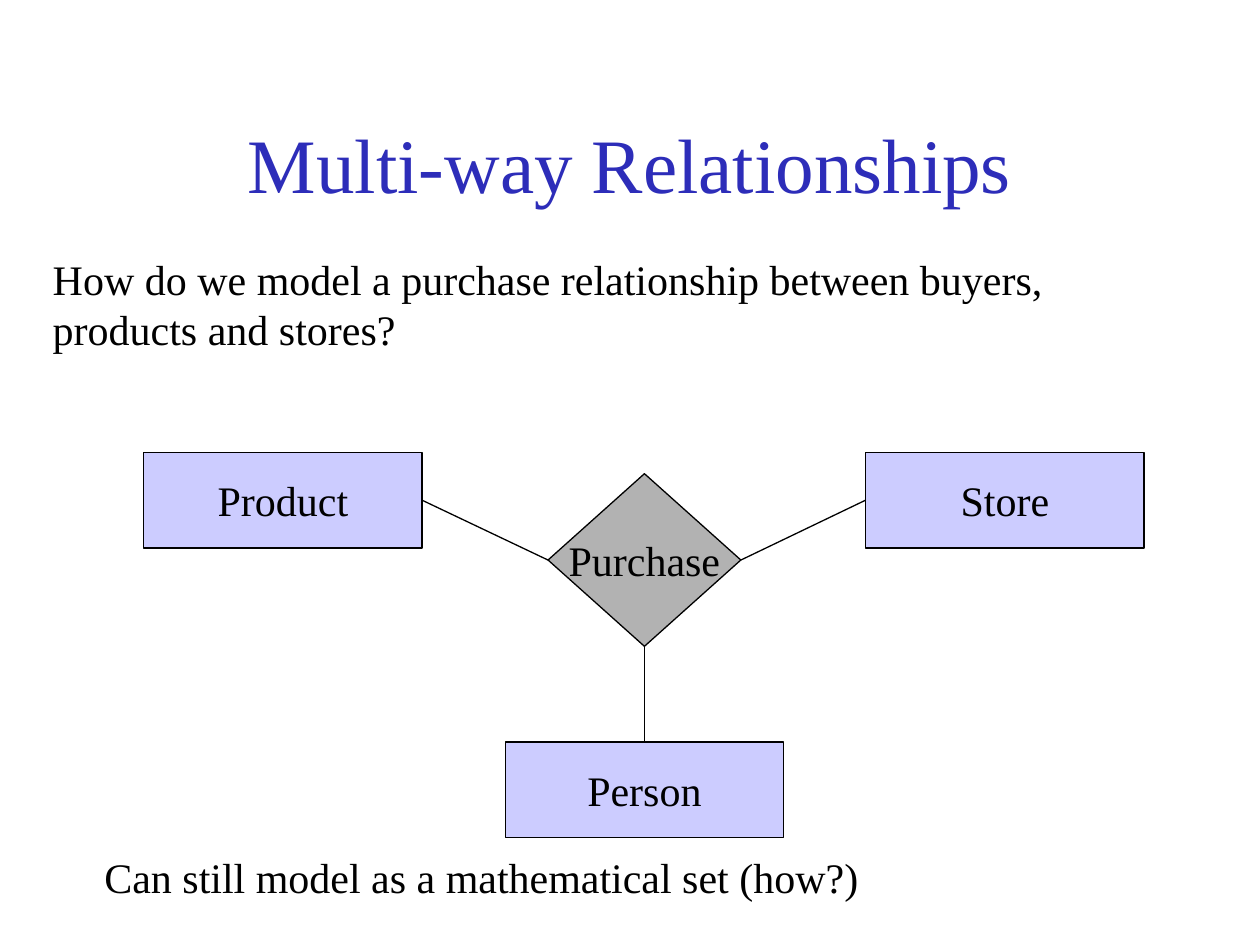
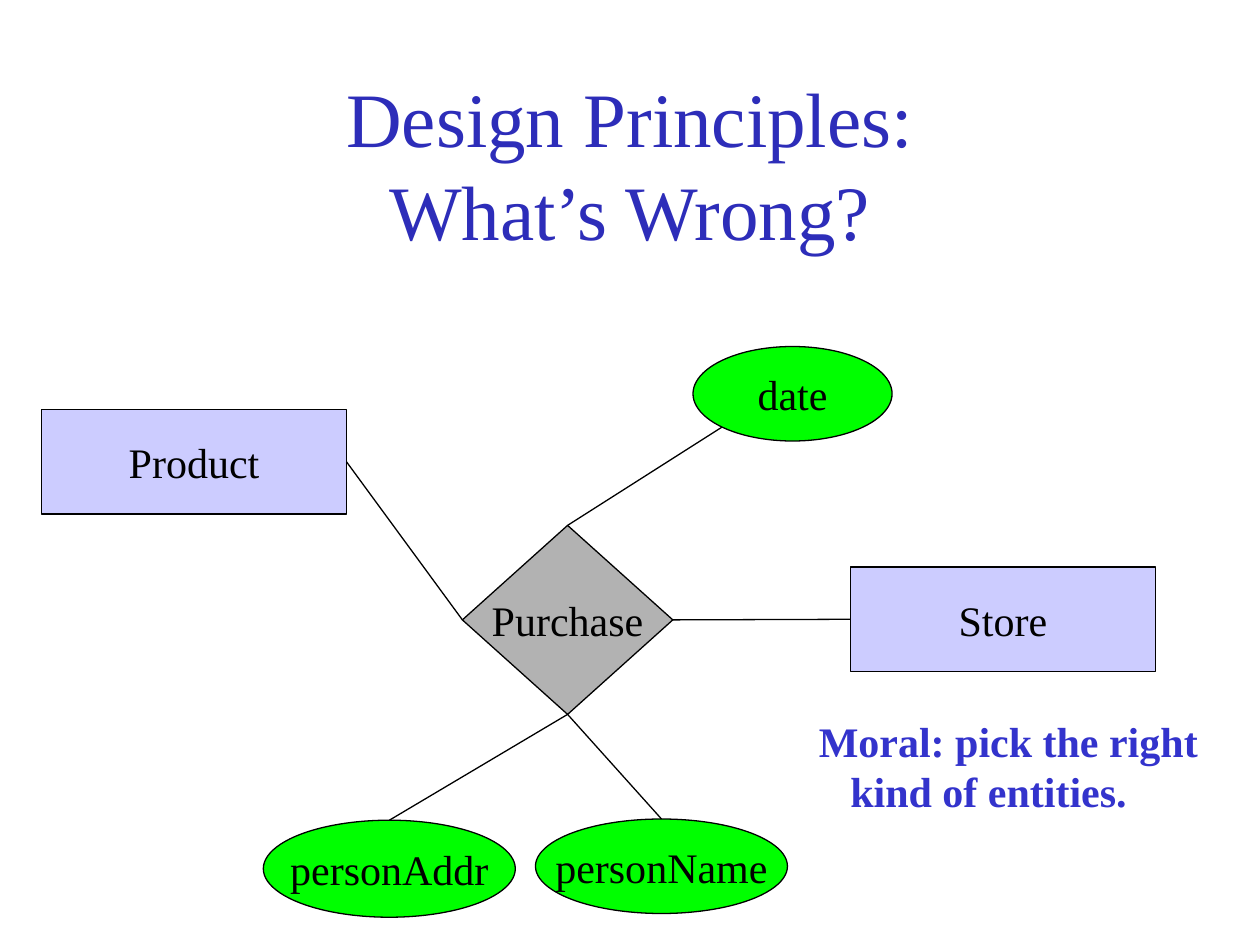
from pptx import Presentation
from pptx.dml.color import RGBColor
from pptx.enum.shapes import MSO_CONNECTOR, MSO_SHAPE
from pptx.enum.text import MSO_ANCHOR, MSO_AUTO_SIZE, PP_ALIGN
from pptx.util import Inches, Pt
from lxml.etree import SubElement
from pptx.oxml.ns import qn

FONT = "Times New Roman"
BLACK = RGBColor(0x00, 0x00, 0x00)
TITLE_BLUE = RGBColor(0x2D, 0x2D, 0xB9)
MORAL_BLUE = RGBColor(0x33, 0x33, 0xCC)
ENTITY_FILL = RGBColor(0xCC, 0xCC, 0xFF)
RELATION_FILL = RGBColor(0xB2, 0xB2, 0xB2)
ATTRIBUTE_FILL = RGBColor(0x00, 0xFF, 0x00)

ENTITY = (MSO_SHAPE.RECTANGLE, ENTITY_FILL)
RELATION = (MSO_SHAPE.DIAMOND, RELATION_FILL)
ATTRIBUTE = (MSO_SHAPE.OVAL, ATTRIBUTE_FILL)
TOP, LEFT, BOTTOM, RIGHT = range(4)


def write_text(frame, text, size=24, color=BLACK, bold=False, align=PP_ALIGN.LEFT,
               anchor=MSO_ANCHOR.TOP, wrap=False, hanging=0):
    """Fill a frame; every paragraph after the first is indented by hanging inches."""
    frame.text = text
    frame.word_wrap = wrap
    frame.auto_size = MSO_AUTO_SIZE.NONE
    frame.vertical_anchor = anchor
    for number, paragraph in enumerate(frame.paragraphs):
        paragraph.alignment = align
        if number and hanging:
            paragraph._p.get_or_add_pPr().set("marL", str(Inches(hanging)))
        for run in paragraph.runs:
            run.font.name = FONT
            run.font.size = Pt(size)
            run.font.bold = bold
            run.font.color.rgb = color


# Nodes: name -> (kind, left, top, width, height).
# Links: side of the relationship, then a node and its side, or a point on an edge.
diagrams = [
    {
        "title": "Multi-way Relationships",
        "nodes": {
            "Purchase": (RELATION, 4.35, 3.76, 1.53, 1.37),
            "Product": (ENTITY, 1.14, 3.59, 2.21, 0.76),
            "Person": (ENTITY, 4.01, 5.89, 2.21, 0.76),
            "Store": (ENTITY, 6.87, 3.59, 2.21, 0.76),
        },
        "links": [(LEFT, "Product", RIGHT), (RIGHT, "Store", LEFT), (BOTTOM, "Person", TOP)],
        "notes": [
            ("How do we model a purchase relationship between buyers,\nproducts and stores?",
             (0.32, 1.96, 8.06, 0.9), {}),
            ("Can still model as a mathematical set (how?)", (0.73, 6.71, 6.26, 0.5), {}),
        ],
    },
    {
        "title": "Design Principles:\vWhat’s Wrong?",
        "nodes": {
            "Purchase": (RELATION, 3.67, 4.17, 1.67, 1.5),
            "Product": (ENTITY, 0.33, 3.25, 2.42, 0.83),
            "Store": (ENTITY, 6.75, 4.5, 2.42, 0.83),
            "date": (ATTRIBUTE, 5.5, 2.75, 1.58, 0.75),
            "personName": (ATTRIBUTE, 4.25, 6.5, 2, 0.75),
            "personAddr": (ATTRIBUTE, 2.09, 6.51, 2, 0.77),
        },
        "links": [(LEFT, "Product", RIGHT), (TOP, (5.73, 3.39), None),
                  (BOTTOM, "personAddr", TOP), (BOTTOM, "personName", TOP),
                  (RIGHT, "Store", LEFT)],
        "notes": [
            ("Moral: pick the right\nkind of entities.", (6.4, 5.63, 3.21, 0.9),
             {"color": MORAL_BLUE, "bold": True, "hanging": 0.25}),
        ],
    },
]

deck = Presentation()
deck.slide_width, deck.slide_height = Inches(10), Inches(7.5)

for diagram in diagrams:
    slide = deck.slides.add_slide(deck.slide_layouts[5])
    title = slide.shapes.title
    title.left, title.top = Inches(0.75), Inches(0.67)
    title.width, title.height = Inches(8.5), Inches(1.25)
    write_text(title.text_frame, diagram["title"], size=44, color=TITLE_BLUE,
               align=PP_ALIGN.CENTER, anchor=MSO_ANCHOR.MIDDLE, wrap=True)

    nodes = {}
    for name, ((outline, fill), *box) in diagram["nodes"].items():
        node = slide.shapes.add_shape(outline, *map(Inches, box))
        node.shadow.inherit = False
        node.fill.solid()
        node.fill.fore_color.rgb = fill
        node.line.color.rgb = BLACK
        node.line.width = Pt(0.75)
        write_text(node.text_frame, name, align=PP_ALIGN.CENTER, anchor=MSO_ANCHOR.MIDDLE)
        nodes[name] = node

    for relation_side, target, target_side in diagram["links"]:
        end = (0, 0) if target in nodes else target
        link = slide.shapes.add_connector(MSO_CONNECTOR.STRAIGHT, 0, 0, *map(Inches, end))
        link.begin_connect(nodes["Purchase"], relation_side)
        if target in nodes:
            link.end_connect(nodes[target], target_side)
        link.line.color.rgb = BLACK
        link.line.width = Pt(0.75)
        SubElement(link._element.spPr, qn("a:effectLst"))

    for text, box, text_format in diagram["notes"]:
        note = slide.shapes.add_textbox(*map(Inches, box))
        write_text(note.text_frame, text, **text_format)

deck.save("out.pptx")
